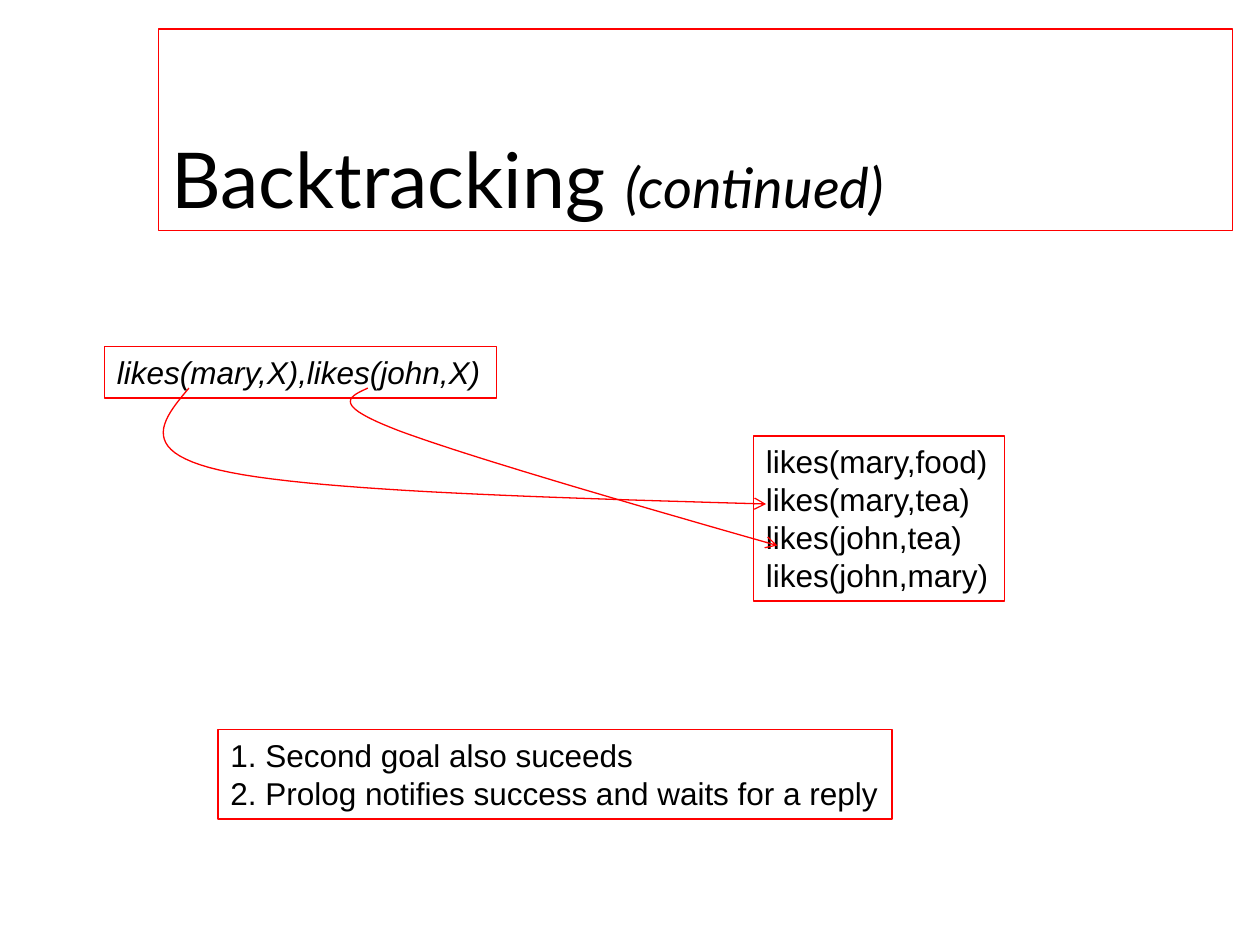
"""Build the Prolog backtracking slide with its goal, facts, notes and arrows."""
import pptx
import pptx.dml.color
import pptx.enum.text
import pptx.oxml
import pptx.oxml.ns
import pptx.util

Pt = pptx.util.Pt
RED = pptx.dml.color.RGBColor(0xFF, 0x00, 0x00)
BLACK = pptx.dml.color.RGBColor(0x00, 0x00, 0x00)
CURVE_STEPS = 24

TITLE_BOX = (90.72, 16.56, 613.44, 115.2)
TITLE_RUNS = [("Backtracking ", 44, False), ("(continued)", 32, True)]
BOXES = [
    ((59.76, 198, 223.92, 29.52), ["likes(mary,X),likes(john,X)"], True),
    ((430.56, 249.12, 143.28, 94.32),
     ["likes(mary,food)", "likes(mary,tea)", "likes(john,tea)", "likes(john,mary)"], False),
    ((124.56, 416.88, 385.2, 51.12),
     ["1. Second goal also suceeds", "2. Prolog notifies success and waits for a reply"], False),
]
ARROWS = [
    [(108, 221.76), (92.16, 240.48), (77.04, 259.2), (131.76, 270),
     (187.2, 280.8), (312.48, 284.4), (437.76, 288)],
    [(210.24, 221.76), (199.44, 226.8), (188.64, 231.12), (228.24, 246.24),
     (267.12, 260.64), (355.68, 286.56), (444.24, 311.76)],
]


def add_text(p, text, size=18, font="Arial", italic=False):
    p.alignment = pptx.enum.text.PP_ALIGN.LEFT
    r = p.add_run()
    r.text = text
    r.font.size = Pt(size)
    r.font.name = font
    r.font.italic = italic
    r.font.color.rgb = BLACK


def outline(sp):
    sp.line.color.rgb = RED
    sp.line.width = Pt(0.75)


def bezier(points, t):
    weights = ((1 - t) ** 3, 3 * t * (1 - t) ** 2, 3 * t ** 2 * (1 - t), t ** 3)
    return tuple(Pt(sum(w * c for w, c in zip(weights, axis))) for axis in zip(*points))


def add_title(slide):
    sp = slide.shapes.title
    sp.left, sp.top, sp.width, sp.height = map(Pt, TITLE_BOX)
    outline(sp)
    tf = sp.text_frame
    tf.auto_size = pptx.enum.text.MSO_AUTO_SIZE.NONE
    tf.vertical_anchor = pptx.enum.text.MSO_ANCHOR.BOTTOM
    for text, size, italic in TITLE_RUNS:
        add_text(tf.paragraphs[0], text, size=size, font="Lato", italic=italic)


def add_box(slide, box, lines, italic):
    sp = slide.shapes.add_textbox(*map(Pt, box))
    outline(sp)
    tf = sp.text_frame
    tf.word_wrap = False
    tf.auto_size = pptx.enum.text.MSO_AUTO_SIZE.SHAPE_TO_FIT_TEXT
    for i, line in enumerate(lines):
        p = tf.add_paragraph() if i else tf.paragraphs[0]
        add_text(p, line, italic=italic)


def add_arrow(slide, points):
    path_points = [bezier(points[i:i + 4], step / CURVE_STEPS)
                   for i in (0, 3) for step in range(1, CURVE_STEPS + 1)]
    builder = slide.shapes.build_freeform(*map(Pt, points[0]))
    builder.add_line_segments(path_points, close=False)
    sp = builder.convert_to_shape()
    sp.fill.background()
    sp.shadow.inherit = False
    outline(sp)
    ns = pptx.oxml.ns.nsdecls("a")
    ln = sp.line._get_or_add_ln()
    ln.append(pptx.oxml.parse_xml(f'<a:tailEnd {ns} type="arrow"/>'))


def main():
    prs = pptx.Presentation()
    prs.slide_width, prs.slide_height = Pt(720), Pt(540)
    slide = prs.slides.add_slide(prs.slide_layouts[5])
    add_title(slide)
    for box, lines, italic in BOXES:
        add_box(slide, box, lines, italic)
    for points in ARROWS:
        add_arrow(slide, points)
    prs.save("out.pptx")


if __name__ == "__main__":
    main()
